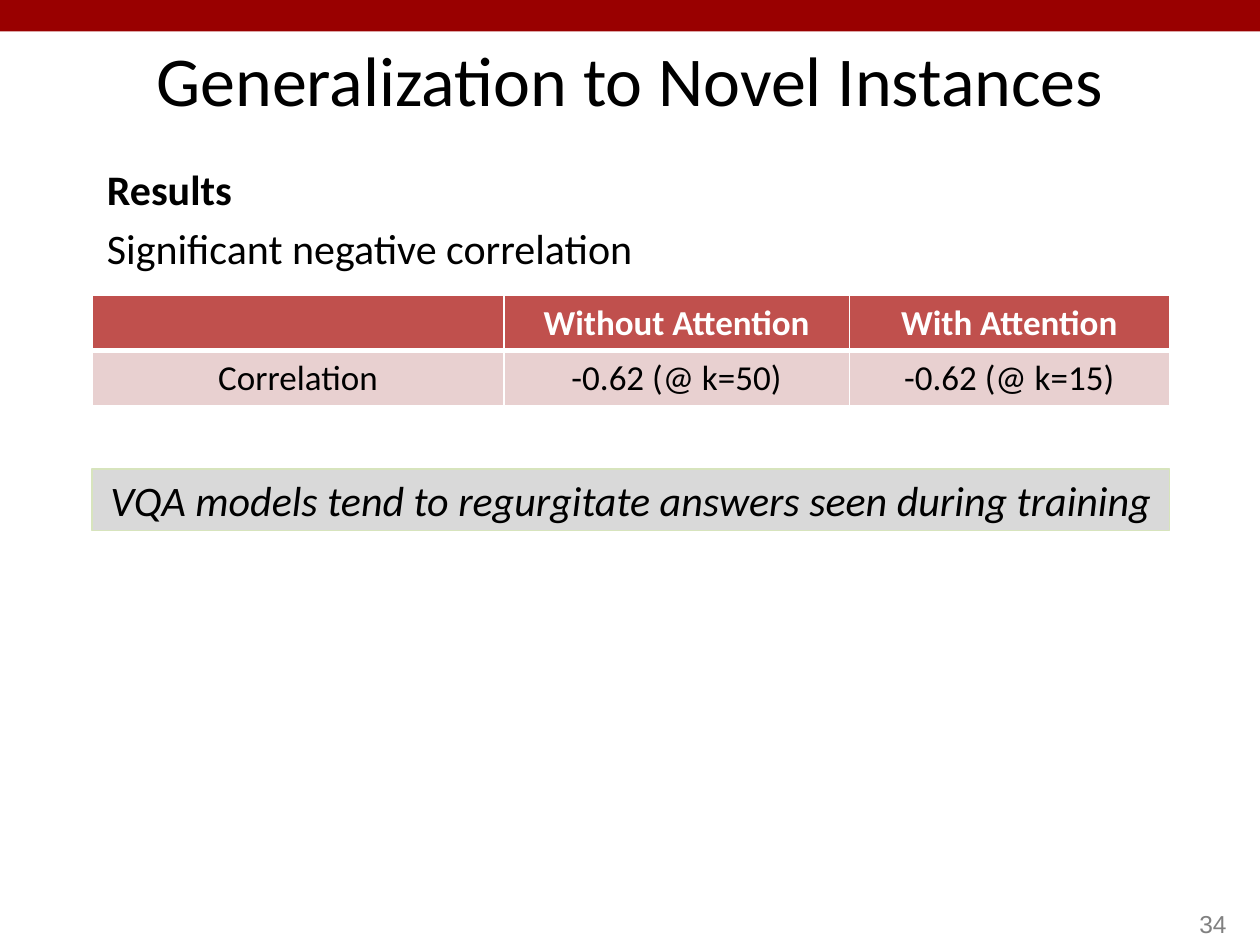
from lxml.etree import SubElement
from pptx import Presentation
from pptx.dml.color import RGBColor
from pptx.enum.shapes import MSO_SHAPE as Shape
from pptx.enum.text import MSO_ANCHOR as Anchor, PP_ALIGN as Align
from pptx.oxml.ns import qn
from pptx.util import Pt

COLORS = {
    "banner": "990000", "header": "C0504D", "row": "E8D0D0",
    "callout": "D9D9D9", "callout_line": "D7E4BD",
    "text": "000000", "white": "FFFFFF", "number": "808080",
}
TABLE_ROWS = [
    ["", "Without Attention", "With Attention"],
    ["Correlation", "-0.62 (@ k=50)", "-0.62 (@ k=15)"],
]
COLUMN_WIDTHS = [235.4, 197.3, 182.9]


def rgb(name):
    """Return the named colour."""
    return RGBColor.from_string(COLORS[name])


def style(para, size, color="text", font="Calibri", align=Align.LEFT, bold=False, italic=False):
    """Format a paragraph and its runs."""
    para.alignment = align
    for run in para.runs:
        run.font.name, run.font.size = font, Pt(size)
        run.font.bold, run.font.italic = bold, italic
        run.font.color.rgb = rgb(color)


def add_panel(page, box, fill, line=None):
    """Add a flat rectangle with an optional outline."""
    panel = page.shapes.add_shape(Shape.RECTANGLE, *map(Pt, box))
    panel.shadow.inherit = False
    panel.fill.solid()
    panel.fill.fore_color.rgb = rgb(fill)
    if line:
        panel.line.color.rgb = rgb(line)
        panel.line.width = Pt(0.75)
    else:
        panel.line.fill.background()
    return panel


def add_text(page, box, text, anchor=Anchor.TOP):
    """Add a wrapping text box and return its frame."""
    frame = page.shapes.add_textbox(*map(Pt, box)).text_frame
    frame.word_wrap = True
    frame.vertical_anchor = anchor
    frame.text = text
    return frame


def add_title(page, box, text):
    """Place and format the title placeholder."""
    title = page.shapes.title
    title.left, title.top, title.width, title.height = map(Pt, box)
    title.text_frame.text = text
    title.text_frame.vertical_anchor = Anchor.MIDDLE
    style(title.text_frame.paragraphs[0], 40, align=Align.CENTER)


def add_results(page, box):
    """Add the results heading and its finding."""
    frame = add_text(page, box, "Results\nSignificant negative correlation")
    for index, para in enumerate(frame.paragraphs):
        para.space_before = Pt(4.8)
        style(para, 24, bold=index == 0)


def add_borders(cell, bottom):
    """Give a cell white borders with the given bottom width."""
    props = cell._tc.get_or_add_tcPr()
    for index, (side, width) in enumerate([("L", 1), ("R", 1), ("T", 1), ("B", bottom)]):
        border = SubElement(props, qn(f"a:ln{side}"), w=str(Pt(width)))
        fill = SubElement(border, qn("a:solidFill"))
        SubElement(fill, qn("a:srgbClr"), val=COLORS["white"])
        props.remove(border)
        props.insert(index, border)


def add_correlation_table(page, box):
    """Add the table of correlations."""
    table = page.shapes.add_table(len(TABLE_ROWS), len(COLUMN_WIDTHS), *map(Pt, box)).table
    for column, width in zip(table.columns, COLUMN_WIDTHS):
        column.width = Pt(width)
    for row, texts in enumerate(TABLE_ROWS):
        header = row == 0
        for column, text in enumerate(texts):
            cell = table.cell(row, column)
            cell.fill.solid()
            cell.fill.fore_color.rgb = rgb("header" if header else "row")
            add_borders(cell, 3 if header else 1)
            cell.text_frame.text = text
            style(cell.text_frame.paragraphs[0], 20, "white" if header else "text",
                  align=Align.CENTER, bold=header)


def add_callout(page, box, text):
    """Add the shaded conclusion."""
    frame = add_panel(page, box, "callout", "callout_line").text_frame
    frame.word_wrap = True
    frame.vertical_anchor = Anchor.MIDDLE
    frame.text = text
    para = frame.paragraphs[0]
    para.space_before = Pt(4.8)
    style(para, 24, align=Align.CENTER, italic=True)


def add_page_number(page, box, text):
    """Add the page number."""
    frame = add_text(page, box, text, Anchor.BOTTOM)
    style(frame.paragraphs[0], 14, "number", "Arial", Align.RIGHT)


def main():
    """Build and save the deck."""
    deck = Presentation()
    deck.slide_width, deck.slide_height = Pt(720), Pt(540)
    page = deck.slides.add_slide(deck.slide_layouts[5])
    add_panel(page, (0, 0, 720, 18), "banner")
    add_title(page, (54, 18, 612, 54), "Generalization to Novel Instances")
    add_results(page, (54, 90, 612, 160))
    add_correlation_table(page, (52.6, 169, 615.6, 62.8))
    add_page_number(page, (558, 504, 150, 36), "34")
    add_callout(page, (52.6, 268, 615.6, 35),
                "VQA models tend to regurgitate answers seen during training")
    deck.save("out.pptx")


if __name__ == "__main__":
    main()
